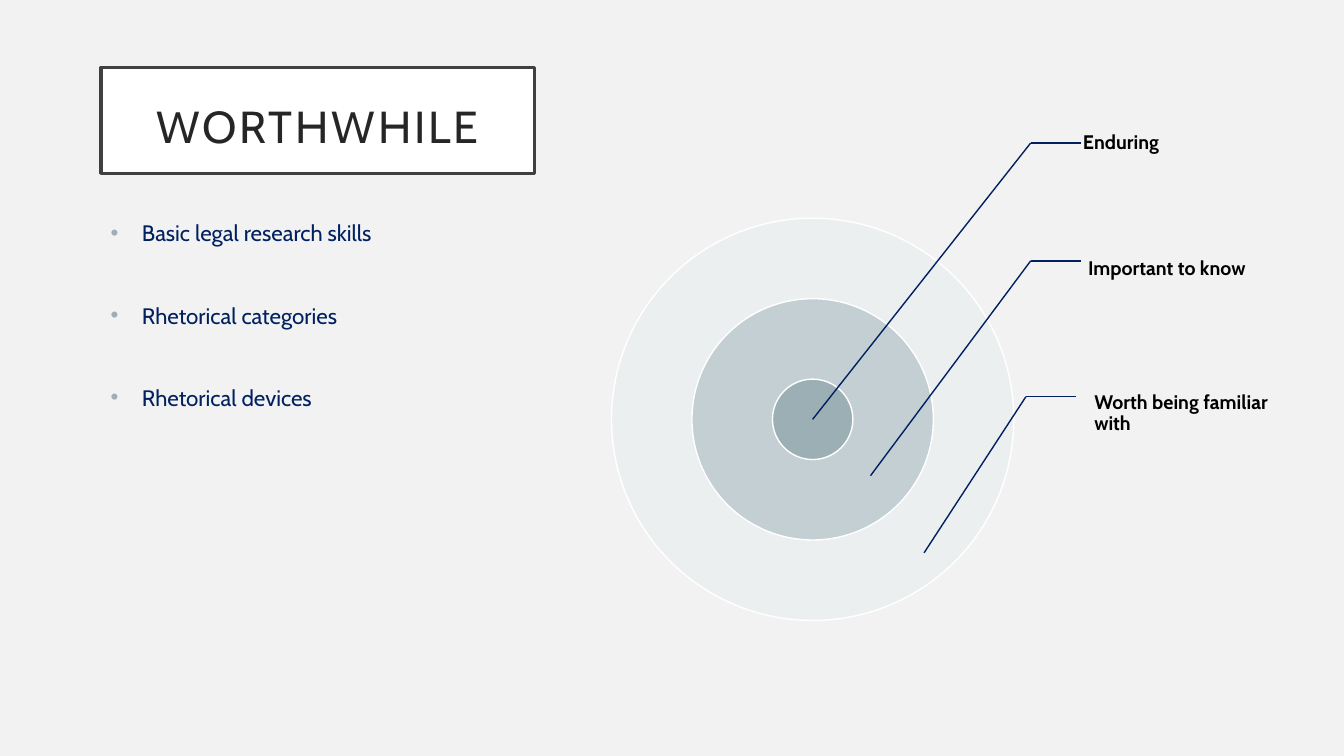
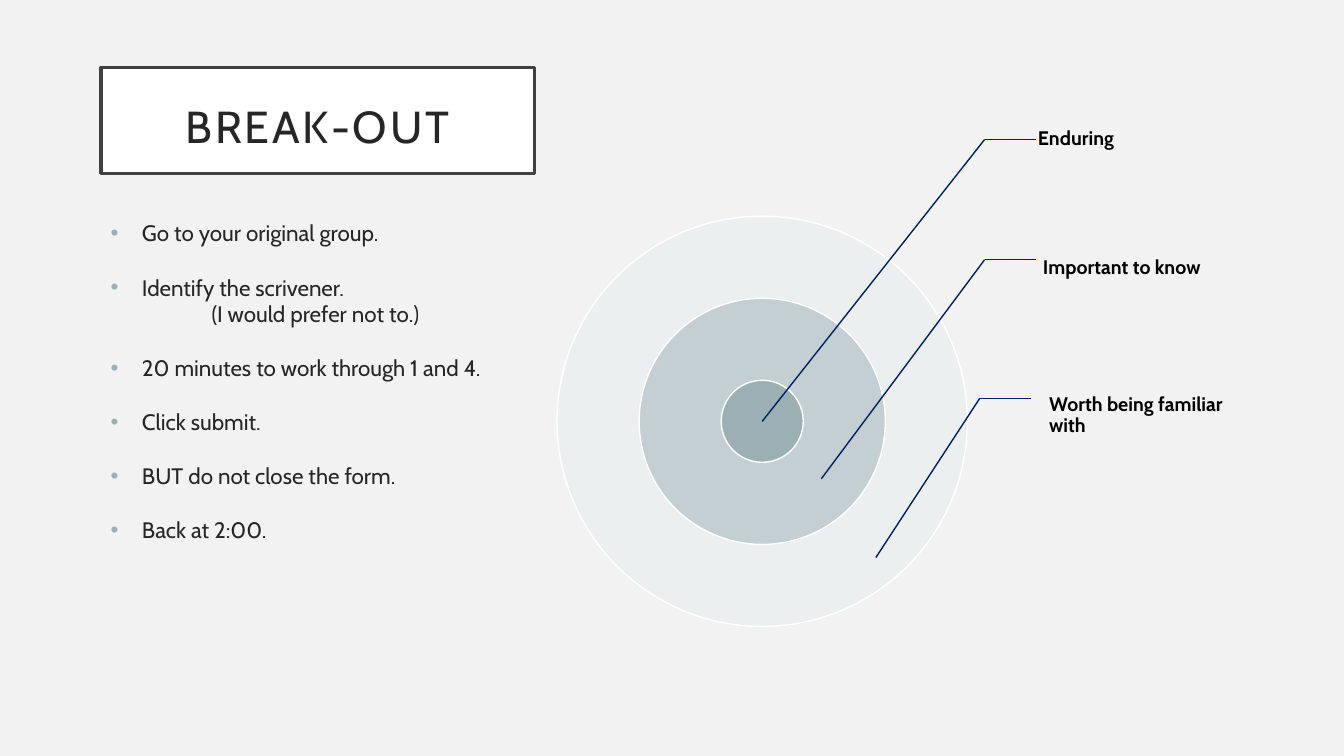
from dataclasses import dataclass

from lxml.etree import SubElement
from pptx import Presentation
from pptx.dml.color import RGBColor
from pptx.enum.shapes import MSO_CONNECTOR, MSO_SHAPE
from pptx.enum.text import MSO_ANCHOR as Anchor, PP_ALIGN as Align
from pptx.oxml.ns import qn
from pptx.shapes.shapetree import GroupShapes
from pptx.slide import Slide
from pptx.util import Inches, Pt

FONT = "Cabin"
COLORS = {
    "background": "F2F2F2",
    "white": "FFFFFF",
    "frame": "404040",
    "ink": "262626",
    "navy": "002060",
    "label": "000000",
    "outer": "EBEFF0",
    "middle": "C3CFD3",
    "inner": "9BAFB5",
}
LINE_HEIGHT = 19.4  # one line of 16 pt body text, in points


@dataclass(frozen=True)
class Ring:
    percent: int
    color: str


@dataclass(frozen=True)
class Callout:
    """Elbow and tip are offsets from the centre, in percent of the diameter."""
    text: str
    elbow: tuple[float, float]
    tip: tuple[float, float]
    text_shift: tuple[float, float]  # inches from the end of the shelf


@dataclass(frozen=True)
class Target:
    center: tuple[float, float]
    diameter: float

    def point(self, offset: tuple[float, float]) -> tuple[float, float]:
        x, y = (c + self.diameter * part / 100 for c, part in zip(self.center, offset))
        return x, y


@dataclass(frozen=True)
class Item:
    text: str
    bulleted: bool = True


@dataclass(frozen=True)
class Page:
    title: str
    items: tuple[Item, ...]
    body_width: float
    body_color: str
    item_gap: float
    target: Target


RINGS = (Ring(100, "outer"), Ring(60, "middle"), Ring(20, "inner"))
SHELF = 12.5  # percent of the diameter
CALLOUTS = (
    Callout("Enduring", (54.2, -68.7), (0, 0), (0.02, 0)),
    Callout("Important to know", (54.2, -39.4), (14.4, 14), (0.07, 0.08)),
    Callout("Worth being familiar with", (53, -5.6), (27.7, 33.2), (0.18, 0.17)),
)
PAGES = (
    Page(
        "WORTHWHILE",
        (
            Item("Basic legal research skills"),
            Item("Rhetorical categories"),
            Item("Rhetorical devices"),
        ),
        5.67, "navy", LINE_HEIGHT + 20, Target((8.06, 4.16), 3.99),
    ),
    Page(
        "BREAK-OUT",
        (
            Item("Go to your original group."),
            Item("Identify the scrivener."),
            Item("(I would prefer not to.)", bulleted=False),
            Item("20 minutes to work through 1 and 4."),
            Item("Click submit."),
            Item("BUT do not close the form."),
            Item("Back at 2:00."),
        ),
        4.3, "ink", LINE_HEIGHT, Target((7.56, 4.18), 4.07),
    ),
)


def rgb(name: str) -> RGBColor:
    return RGBColor.from_string(COLORS[name])


def style_span(span, size: float, color: str, bold: bool = False) -> None:
    span.font.name = FONT
    span.font.size = Pt(size)
    span.font.bold = bold
    span.font.color.rgb = rgb(color)


def style_shape(shape, fill: str, line: str, width: float) -> None:
    shape.shadow.inherit = False
    shape.fill.solid()
    shape.fill.fore_color.rgb = rgb(fill)
    shape.line.color.rgb = rgb(line)
    shape.line.width = Pt(width)


def set_margins(frame, margin: float) -> None:
    frame.margin_left = frame.margin_right = Inches(margin)
    frame.margin_top = frame.margin_bottom = Inches(margin)


def indent(para, left: float, bulleted: bool) -> None:
    properties = para._p.get_or_add_pPr()
    properties.set("marL", str(Inches(left)))
    if bulleted:
        properties.set("indent", str(-Inches(left)))
        color = SubElement(properties, qn("a:buClr"))
        SubElement(color, qn("a:srgbClr"), val=COLORS["inner"])
        SubElement(properties, qn("a:buFont"), typeface="Arial")
        SubElement(properties, qn("a:buChar"), char="•")


def add_title(slide: Slide, text: str) -> None:
    box = slide.shapes.add_shape(
        MSO_SHAPE.RECTANGLE, Inches(1), Inches(0.67), Inches(4.3), Inches(1.05))
    style_shape(box, "white", "frame", 2.5)
    frame = box.text_frame
    frame.text = text
    frame.word_wrap = True
    frame.vertical_anchor = Anchor.BOTTOM
    set_margins(frame, 0.2)
    para = frame.paragraphs[0]
    para.alignment = Align.CENTER
    para.line_spacing = 0.9
    span = para.runs[0]
    style_span(span, 32, "ink")
    span.font._element.set("spc", "200")


def add_body(slide: Slide, page: Page) -> None:
    box = slide.shapes.add_textbox(
        Inches(1), Inches(2.13), Inches(page.body_width), Inches(4.2))
    frame = box.text_frame
    frame.word_wrap = True
    frame.text = "\n".join(item.text for item in page.items)
    for index, (para, item) in enumerate(zip(frame.paragraphs, page.items)):
        para.space_before = Pt(page.item_gap if index and item.bulleted else 0)
        indent(para, 0.31 if item.bulleted else 1, item.bulleted)
        style_span(para.runs[0], 16, page.body_color)


def add_line(shapes: GroupShapes, start: tuple[float, float],
             end: tuple[float, float]) -> None:
    line = shapes.add_connector(
        MSO_CONNECTOR.STRAIGHT, *(Inches(value) for value in start + end))
    line.line.color.rgb = rgb("navy")
    line.line.width = Pt(1)
    SubElement(line._element.spPr, qn("a:effectLst"))


def add_label(shapes: GroupShapes, text: str, left: float, middle: float) -> None:
    height = 0.5
    box = shapes.add_textbox(
        Inches(left), Inches(middle - height / 2), Inches(1.87), Inches(height))
    frame = box.text_frame
    frame.text = text
    frame.word_wrap = True
    frame.vertical_anchor = Anchor.MIDDLE
    set_margins(frame, 0)
    para = frame.paragraphs[0]
    para.line_spacing = 0.9
    style_span(para.runs[0], 14, "label", bold=True)


def add_target(slide: Slide, target: Target) -> None:
    shapes = slide.shapes.add_group_shape().shapes
    # Concentric rings
    for ring in RINGS:
        half = ring.percent / 2
        left, top = target.point((-half, -half))
        size = Inches(target.diameter * ring.percent / 100)
        circle = shapes.add_shape(
            MSO_SHAPE.OVAL, Inches(left), Inches(top), size, size)
        style_shape(circle, ring.color, "white", 1)
    # Leaders and labels
    for callout in CALLOUTS:
        elbow = target.point(callout.elbow)
        shelf_end = target.point((callout.elbow[0] + SHELF, callout.elbow[1]))
        add_line(shapes, elbow, shelf_end)
        add_line(shapes, elbow, target.point(callout.tip))
        shift_x, shift_y = callout.text_shift
        add_label(shapes, callout.text, shelf_end[0] + shift_x, shelf_end[1] + shift_y)


def main() -> None:
    deck = Presentation()
    deck.slide_width = Inches(13.33)
    deck.slide_height = Inches(7.5)
    for page in PAGES:
        slide = deck.slides.add_slide(deck.slide_layouts[6])
        slide.background.fill.solid()
        slide.background.fill.fore_color.rgb = rgb("background")
        add_title(slide, page.title)
        add_body(slide, page)
        add_target(slide, page.target)
    deck.save("out.pptx")


if __name__ == "__main__":
    main()
